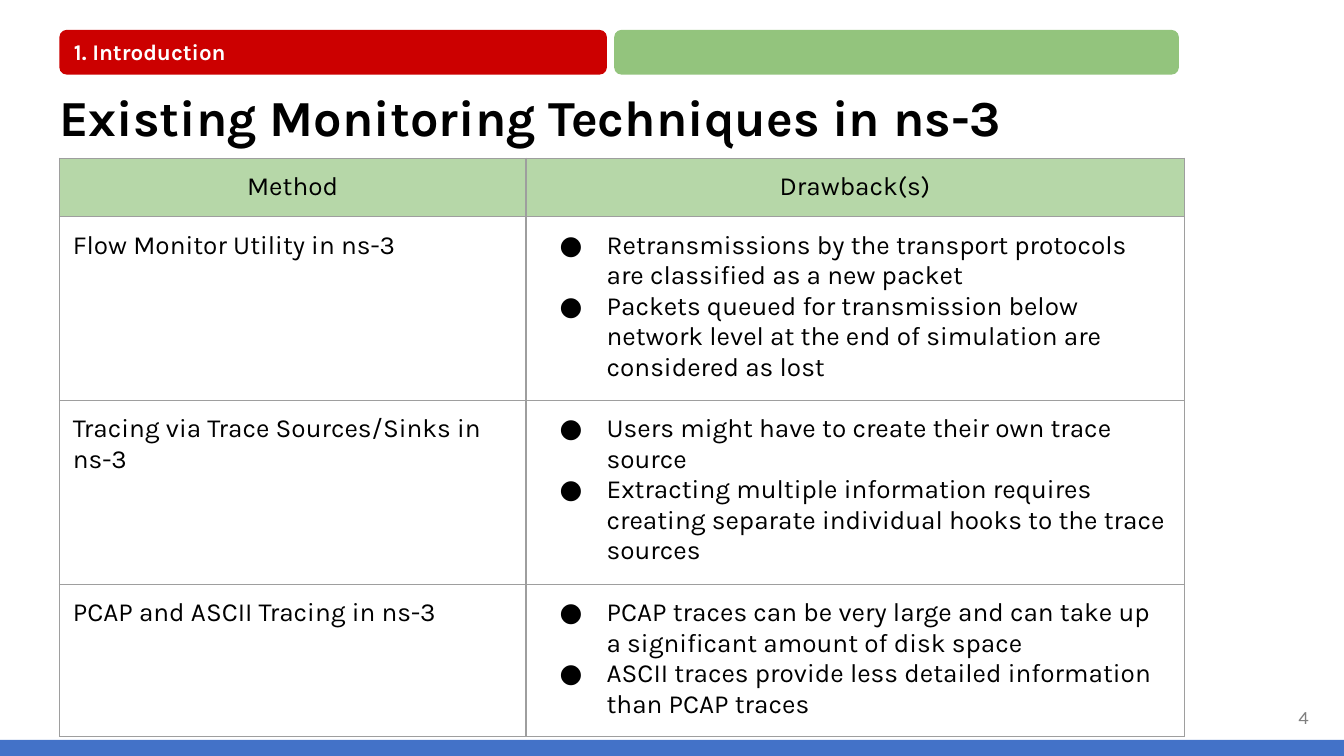
from dataclasses import dataclass

from lxml import etree
from pptx import Presentation
from pptx.dml.color import RGBColor
from pptx.enum.shapes import MSO_SHAPE
from pptx.enum.text import MSO_ANCHOR, MSO_AUTO_SIZE, PP_ALIGN
from pptx.oxml.ns import qn
from pptx.util import Pt

FONT = "Karla"
BLACK, WHITE, GRAY = "000000", "FFFFFF", "7F7F7F"
BLUE, RED, GREEN, PALE_GREEN = "4372C8", "CC0000", "93C47D", "B6D7A8"
BORDER = "9E9E9E"
RECTANGLE, ROUNDED = MSO_SHAPE.RECTANGLE, MSO_SHAPE.ROUNDED_RECTANGLE
TOP, NO_AUTOFIT = MSO_ANCHOR.TOP, MSO_AUTO_SIZE.NONE
LEFT, CENTER = PP_ALIGN.LEFT, PP_ALIGN.CENTER

SLIDE_WIDTH, SLIDE_HEIGHT = 720, 405
MARGIN = 31.8


@dataclass
class Area:
    left: float
    top: float
    width: float
    height: float

    def lengths(self) -> tuple:
        return Pt(self.left), Pt(self.top), Pt(self.width), Pt(self.height)


@dataclass
class Technique:
    method: str
    drawbacks: list[str]
    height: float


TECHNIQUES = [
    Technique("Flow Monitor Utility in ns-3", [
        "Retransmissions by the transport protocols are classified as a new packet",
        "Packets queued for transmission below network level at the end of "
        "simulation are considered as lost",
    ], 98.4),
    Technique("Tracing via Trace Sources/Sinks in ns-3", [
        "Users might have to create their own trace source",
        "Extracting multiple information requires creating separate individual "
        "hooks to the trace sources",
    ], 98.4),
    Technique("PCAP and ASCII Tracing in ns-3", [
        "PCAP traces can be very large and can take up a significant amount of "
        "disk space",
        "ASCII traces provide less detailed information than PCAP traces",
    ], 81.8),
]
HEADER_HEIGHT = 31.4
COLUMN_WIDTHS = [250, 352.6]


def color(value: str) -> RGBColor:
    return RGBColor.from_string(value)


def style_paragraph(para, size: float, ink: str, bold: bool = False, align=LEFT) -> None:
    para.alignment = align
    for span in para.runs:
        span.font.name = FONT
        span.font.size = Pt(size)
        span.font.bold = bold
        span.font.color.rgb = color(ink)


def fill_text(box, area: Area, text: str, size: float, ink: str, bold: bool = False) -> None:
    box.left, box.top, box.width, box.height = area.lengths()
    frame = box.text_frame
    frame.text = text
    frame.word_wrap = True
    frame.auto_size = NO_AUTOFIT
    frame.vertical_anchor = TOP
    frame.margin_left = frame.margin_right = frame.margin_bottom = 0
    frame.margin_top = Pt(0.9)
    style_paragraph(frame.paragraphs[0], size, ink, bold)


def add_text(page, area: Area, text: str, size: float, ink: str, bold: bool = False) -> None:
    fill_text(page.shapes.add_textbox(*area.lengths()), area, text, size, ink, bold)


def add_bar(page, preset, area: Area, fill: str) -> None:
    bar = page.shapes.add_shape(preset, *area.lengths())
    bar.shadow.inherit = False
    bar.fill.solid()
    bar.fill.fore_color.rgb = color(fill)
    bar.line.fill.background()
    if preset == ROUNDED:
        bar.adjustments[0] = 0.17


def add_bullet(para) -> None:
    properties = para._p.get_or_add_pPr()
    properties.set("marL", str(Pt(36)))
    properties.set("indent", str(Pt(-25.2)))
    tint = etree.SubElement(properties, qn("a:buClr"))
    etree.SubElement(tint, qn("a:srgbClr"), val=BLACK)
    etree.SubElement(properties, qn("a:buFont"), typeface=FONT)
    etree.SubElement(properties, qn("a:buChar"), char="●")


def add_borders(cell) -> None:
    properties = cell._tc.get_or_add_tcPr()
    for index, side in enumerate(("lnL", "lnR", "lnT", "lnB")):
        line = etree.Element(qn(f"a:{side}"), w=str(Pt(0.75)))
        solid = etree.SubElement(line, qn("a:solidFill"))
        etree.SubElement(solid, qn("a:srgbClr"), val=BORDER)
        properties.insert(index, line)


def fill_cell(cell, lines: list[str], header: bool = False, bullets: bool = False) -> None:
    if header:
        cell.fill.solid()
        cell.fill.fore_color.rgb = color(PALE_GREEN)
    else:
        cell.fill.background()
    add_borders(cell)
    cell.margin_left = cell.margin_right = Pt(7.2)
    cell.margin_top = cell.margin_bottom = Pt(7.2)
    cell.text_frame.text = "\n".join(lines)
    for para in cell.text_frame.paragraphs:
        if bullets:
            add_bullet(para)
        style_paragraph(para, 14, BLACK, align=CENTER if header else LEFT)


def add_techniques(page) -> None:
    heights = [HEADER_HEIGHT] + [technique.height for technique in TECHNIQUES]
    area = Area(MARGIN, 84.8, sum(COLUMN_WIDTHS), sum(heights))
    table = page.shapes.add_table(len(heights), len(COLUMN_WIDTHS), *area.lengths()).table
    table.first_row = table.horz_banding = False
    for column, width in zip(table.columns, COLUMN_WIDTHS):
        column.width = Pt(width)
    for row, height in zip(table.rows, heights):
        row.height = Pt(height)
    for index, heading in enumerate(("Method", "Drawback(s)")):
        fill_cell(table.cell(0, index), [heading], header=True)
    for index, technique in enumerate(TECHNIQUES, start=1):
        fill_cell(table.cell(index, 0), [technique.method])
        fill_cell(table.cell(index, 1), technique.drawbacks, bullets=True)


def main() -> None:
    deck = Presentation()
    deck.slide_width, deck.slide_height = Pt(SLIDE_WIDTH), Pt(SLIDE_HEIGHT)
    page = deck.slides.add_slide(deck.slide_layouts[5])

    # Footer band
    add_bar(page, RECTANGLE, Area(0, 396.4, SLIDE_WIDTH, SLIDE_HEIGHT - 396.4), BLUE)

    # Title
    title_area = Area(MARGIN, 45.4, 570, 33.8)
    fill_text(page.shapes.title, title_area, "Existing Monitoring Techniques in ns-3",
              27, BLACK, bold=True)

    # Section bars
    add_bar(page, ROUNDED, Area(MARGIN, 16, 293.4, 24), RED)
    add_text(page, Area(39.6, 19.4, 273.6, 16), "1. Introduction", 12, WHITE, bold=True)
    add_bar(page, ROUNDED, Area(329, 16, 302.6, 24), GREEN)

    # Page number
    add_text(page, Area(695.6, 377.3, 14, 13), "4", 10, GRAY)

    # Techniques and their drawbacks
    add_techniques(page)

    deck.save("out.pptx")


if __name__ == "__main__":
    main()
